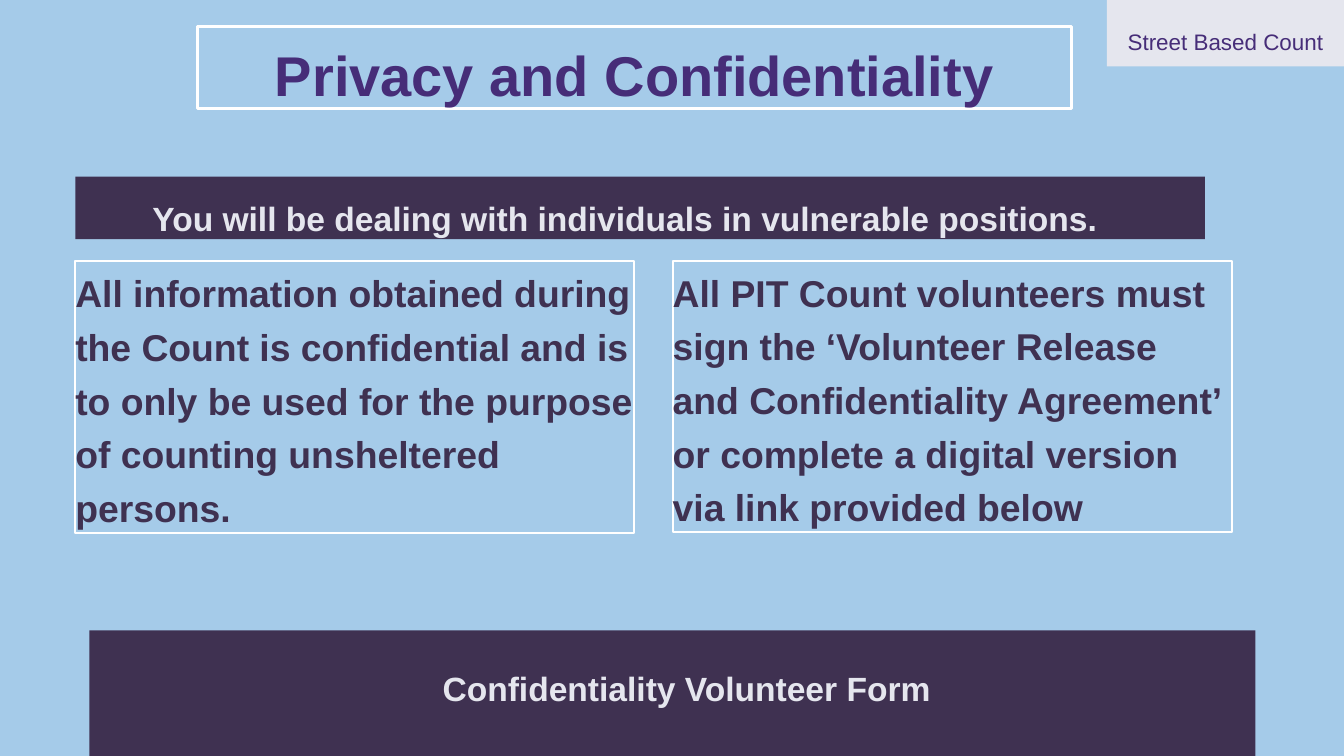
from pptx import Presentation, util as u
from pptx.dml.color import RGBColor
from pptx.enum import shapes, text
from pptx.oxml.xmlchemy import OxmlElement

SKY = RGBColor(0xA5, 0xCB, 0xE9)
PLUM = RGBColor(0x3F, 0x31, 0x51)
VIOLET = RGBColor(0x46, 0x2D, 0x78)
MIST = RGBColor(0xE5, 0xE6, 0xEE)
WHITE = RGBColor(0xFF, 0xFF, 0xFF)
COLUMNS = 20
TWO_CONTENT = 3


class CountSlide:
    frame_format = dict(margin_left=0, margin_top=0, margin_right=0, margin_bottom=0,
                        word_wrap=True, auto_size=text.MSO_AUTO_SIZE.NONE,
                        vertical_anchor=text.MSO_ANCHOR.TOP)

    def __init__(self, deck):
        self.cell = deck.slide_width / COLUMNS
        self.slide = deck.slides.add_slide(deck.slide_layouts[TWO_CONTENT])
        self.slide.background.fill.solid()
        self.slide.background.fill.fore_color.rgb = SKY

    def place(self, *grid):
        return [round(value * self.cell) for value in grid]

    def set_words(self, holder, words, size, color, bold=True, align=text.PP_ALIGN.CENTER):
        frame = holder.text_frame
        frame.text = words
        paragraph = frame.paragraphs[0]
        font_format = dict(name="Arial", size=u.Pt(size), bold=bold)
        paragraph_format = dict(alignment=align, line_spacing=1.2,
                                space_before=u.Pt(0), space_after=u.Pt(0))
        for target, values in ((frame, self.frame_format), (paragraph, paragraph_format),
                               (paragraph.runs[0].font, font_format)):
            for key, value in values.items():
                setattr(target, key, value)
        paragraph.runs[0].font.color.rgb = color
        return paragraph

    def outlined(self, index, grid, words, size, color, line_width, align):
        holder = self.slide.placeholders[index]
        for key, value in zip(("left", "top", "width", "height"), self.place(*grid)):
            setattr(holder, key, value)
        holder.line.color.rgb = WHITE
        holder.line.width = u.Pt(line_width)
        return self.set_words(holder, words, size, color, align=align)

    def title(self, grid, words):
        self.outlined(0, grid, words, 60, VIOLET, 3, text.PP_ALIGN.CENTER)

    def body(self, index, grid, words):
        paragraph = self.outlined(index, grid, words, 40, PLUM, 2.25, text.PP_ALIGN.LEFT)
        properties = paragraph._p.get_or_add_pPr()
        properties.set("marL", "0")
        properties.set("indent", "0")
        properties.append(OxmlElement("a:buNone"))

    def panel(self, grid, color):
        panel = self.slide.shapes.add_shape(shapes.MSO_SHAPE.RECTANGLE, *self.place(*grid))
        panel.shadow.inherit = False
        panel.fill.solid()
        panel.fill.fore_color.rgb = color
        panel.line.fill.background()

    def label(self, grid, words, size=36, color=MIST, bold=True):
        label = self.slide.shapes.add_textbox(*self.place(*grid))
        self.set_words(label, words, size, color, bold)


def main():
    deck = Presentation()
    deck.slide_width, deck.slide_height = u.Inches(20), u.Inches(11.25)
    page = CountSlide(deck)

    page.title((2.94, 0.4, 13, 1.21), "Privacy and Confidentiality")
    rules = (
        (1, 1.12, 3.89, "All information obtained during the Count is confidential and is "
                        "to only be used for the purpose of counting unsheltered persons."),
        (2, 10.01, 3.88, "All PIT Count volunteers must sign the ‘Volunteer Release and "
                         "Confidentiality Agreement’ or complete a digital version "
                         "via link provided below"),
    )
    for index, column, row, rule in rules:
        page.body(index, (column, row, 8.32, 4.04), rule)

    page.panel((1.12, 2.63, 16.81, 0.93), PLUM)
    page.label((0.93, 2.82, 16.89, 0.73),
               "You will be dealing with individuals in vulnerable positions. ")
    page.panel((1.33, 9.38, 17.35, 2.33), PLUM)
    page.label((1.76, 9.82, 16.92, 0.73), "Confidentiality Volunteer Form")
    page.panel((16.47, -0.07, 3.53, 1.06), MIST)
    page.label((16.47, 0.34, 3.53, 0.4), "Street Based Count", 24, VIOLET, False)

    deck.save("out.pptx")


if __name__ == "__main__":
    main()
